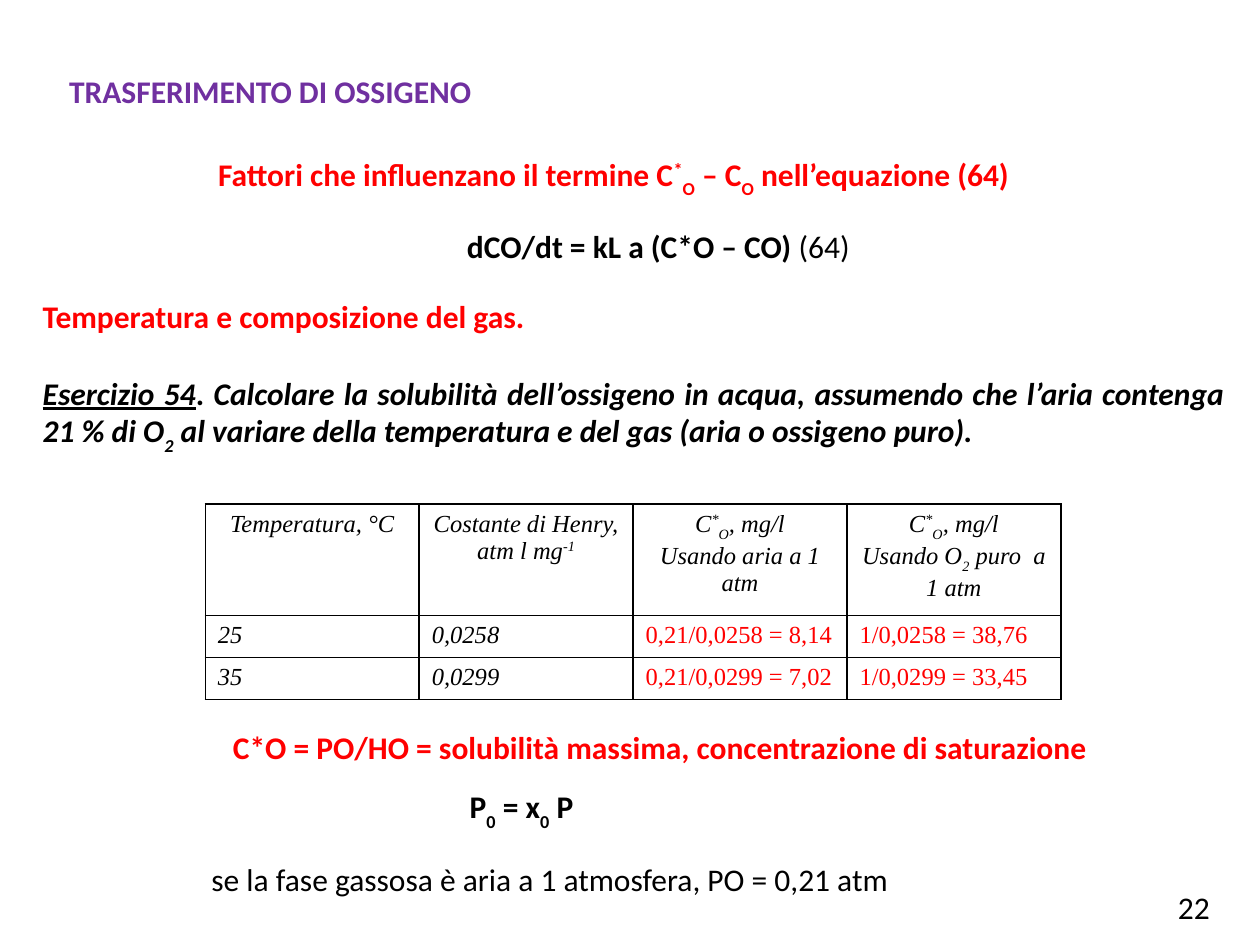
from lxml import etree
from pptx import Presentation
from pptx.dml.color import RGBColor
from pptx.enum.text import PP_ALIGN
from pptx.oxml.ns import qn
from pptx.util import Inches, Pt

LEFT, MID, JUST = PP_ALIGN.LEFT, PP_ALIGN.CENTER, PP_ALIGN.JUSTIFY
BLACK, RED, PURPLE = "000000", "FF0000", "7030A0"
SHIFT = {"^": "30000", "_": "-30000"}

# Style letters: b bold, i italic, u underline, ^ superscript, _ subscript.
TEXTS = [
    ((0.45, 0.52, 3.42, 0.4), False, [
        (LEFT, PURPLE, 0, [("TRASFERIMENTO DI OSSIGENO", "b")])]),
    ((1.58, 1.18, 6.58, 0.4), False, [
        (MID, RED, 0, [("Fattori che influenzano il termine C", "b"), ("*", "b^"),
                       ("O", "b_"), (" – C", "b"), ("O", "b_"),
                       (" nell’equazione (64)", "b")])]),
    ((0.93, 1.75, 8.59, 0.4), True, [
        (MID, BLACK, 0, [("dCO/dt = kL a (C*O – CO)", "b"), (" (64)", "")])]),
    ((0.24, 2.31, 9.58, 1.31), True, [
        (JUST, RED, 0, [("Temperatura e composizione del gas.", "b")]),
        (JUST, BLACK, 22, [
            ("Esercizio 54", "biu"), (". ", "b"),
            ("Calcolare la solubilità dell’ossigeno in acqua, assumendo che "
             "l’aria contenga 21 % di O", "bi"),
            ("2", "bi_"),
            (" al variare della temperatura e del gas (aria o ossigeno puro).", "bi")])]),
    ((1.75, 5.73, 7.5, 0.4), True, [
        (LEFT, RED, 0, [("C*O = PO/HO = solubilità massima, "
                         "concentrazione di saturazione", "b")])]),
    ((3.63, 6.2, 5, 0.4), True, [
        (LEFT, BLACK, 0, [("P", "b"), ("0", "b_"), (" = x", "b"),
                          ("0", "b_"), (" P", "b")])]),
    ((1.58, 6.78, 5.97, 0.4), True, [
        (LEFT, BLACK, 0, [("se la fase gassosa è aria a 1 atmosfera, PO = 0,21 atm", "")])]),
    ((9.25, 7, 0.53, 0.5), False, [(LEFT, BLACK, 0, [("22", "")])]),
]

CONC = [("C", "i"), ("*", "i^"), ("O", "i_"), (", mg/l", "i")]
HEADS = [
    [[("Temperatura, °C", "i")]],
    [[("Costante di Henry, atm l mg", "i"), ("-1", "i^")]],
    [CONC, [("Usando aria a 1 atm", "i")]],
    [CONC, [("Usando O", "i"), ("2", "i_"), (" puro  a 1 atm", "i")]],
]
DATA = [
    ("25", "0,0258", "0,21/0,0258 = 8,14", "1/0,0258 = 38,76"),
    ("35", "0,0299", "0,21/0,0299 = 7,02", "1/0,0299 = 33,45"),
]
PLACE = (1.63, 4, 6.79, 1.54)
ROWS = (0.88, 0.33, 0.33)


def color(code):
    return RGBColor.from_string(code)


def write(frame, paras, face, size):
    for n, (align, tint, gap, runs) in enumerate(paras):
        para = frame.add_paragraph() if n else frame.paragraphs[0]
        para.alignment = align
        para.space_before = Pt(gap)
        for text, style in runs:
            run = para.add_run()
            run.text = text
            font = run.font
            font.name, font.size = face, Pt(size)
            font.color.rgb = color(tint)
            font.bold, font.italic = "b" in style, "i" in style
            font.underline = "u" in style
            for mark, base in SHIFT.items():
                if mark in style:
                    run._r.get_or_add_rPr().set("baseline", base)


def border(cell):
    props = cell._tc.get_or_add_tcPr()
    for n, side in enumerate(("lnL", "lnR", "lnT", "lnB")):
        line = etree.Element(qn("a:" + side), w=str(Pt(1)))
        fill = etree.SubElement(line, qn("a:solidFill"))
        etree.SubElement(fill, qn("a:srgbClr"), val=BLACK)
        props.insert(n, line)


def fill_cell(cell, paras):
    cell.fill.background()
    write(cell.text_frame, paras, "Times New Roman", 14)
    border(cell)


deck = Presentation()
deck.slide_width, deck.slide_height = Inches(10), Inches(7.5)
slide = deck.slides.add_slide(deck.slide_layouts[6])

for place, wrap, paras in TEXTS:
    frame = slide.shapes.add_textbox(*map(Inches, place)).text_frame
    frame.word_wrap = wrap
    write(frame, paras, "Calibri", 18)

table = slide.shapes.add_table(len(ROWS), len(HEADS), *map(Inches, PLACE)).table
table.first_row = table.horz_banding = False
for row, high in zip(table.rows, ROWS):
    row.height = Inches(high)
for col, head in enumerate(HEADS):
    table.columns[col].width = Inches(PLACE[2] / len(HEADS))
    fill_cell(table.cell(0, col), [(MID, BLACK, 0, runs) for runs in head])
    tint, style = (BLACK, "i") if col < 2 else (RED, "")
    for row, items in enumerate(DATA, 1):
        fill_cell(table.cell(row, col), [(LEFT, tint, 0, [(items[col], style)])])

deck.save("out.pptx")
